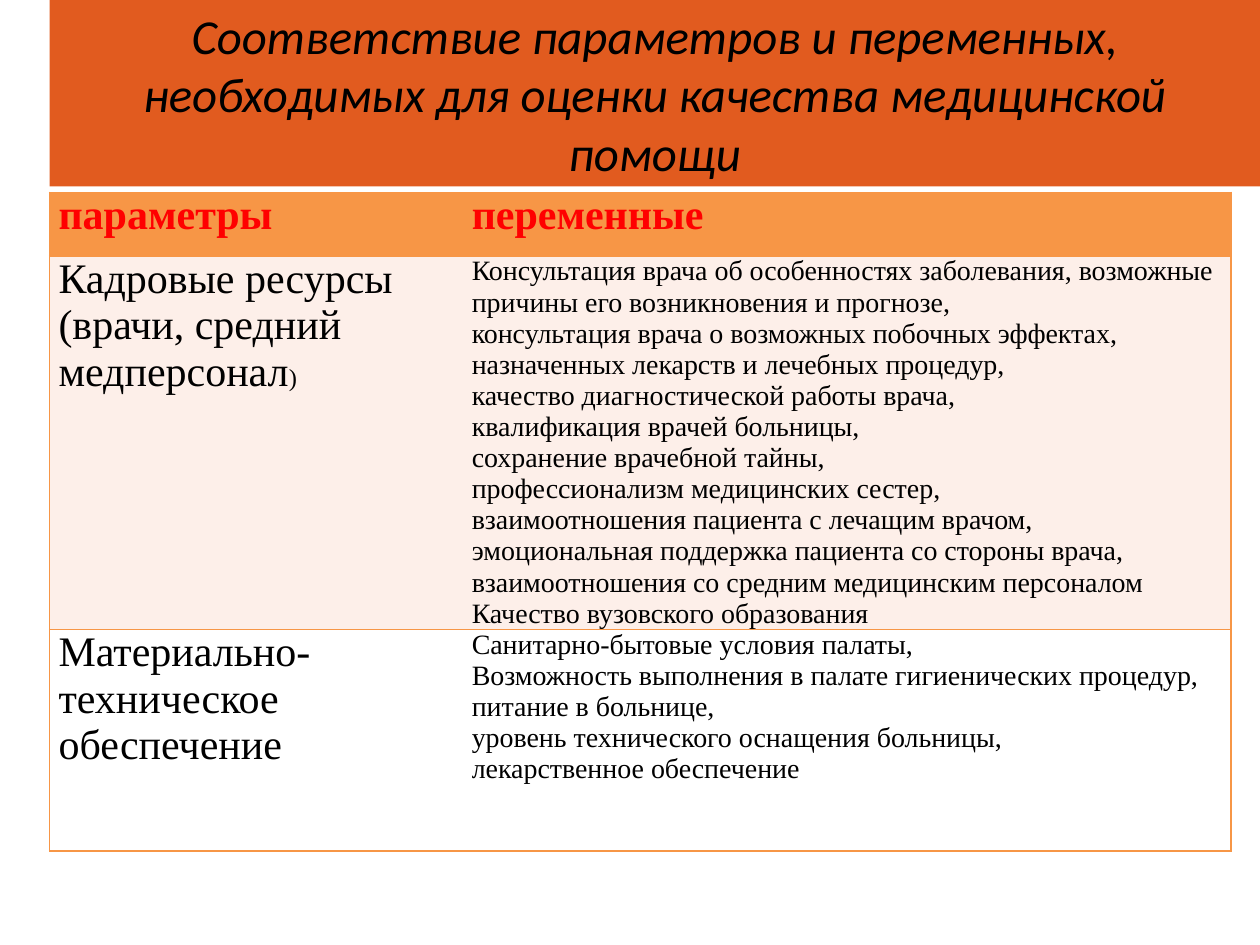
from lxml import etree
from pptx import Presentation
from pptx.dml.color import RGBColor
from pptx.enum.shapes import MSO_SHAPE
from pptx.enum.text import MSO_ANCHOR, PP_ALIGN
from pptx.oxml.ns import qn
from pptx.util import Cm, Pt

RECTANGLE = MSO_SHAPE.RECTANGLE
MIDDLE, TOP = MSO_ANCHOR.MIDDLE, MSO_ANCHOR.TOP
CENTER = PP_ALIGN.CENTER

# Content: a cell is a list of paragraphs, a paragraph a list of (text, size)
TITLE = "Соответствие параметров и переменных, необходимых для оценки качества медицинской помощи"
HEADINGS = ["параметры", "переменные"]
STAFF = [("Кадровые ресурсы (врачи, средний медперсонал", 24), (")", 14)]
STAFF_VARIABLES = [
    "Консультация врача об особенностях заболевания, возможные причины его возникновения и прогнозе,",
    "консультация врача о возможных побочных эффектах,",
    "назначенных лекарств и лечебных процедур,",
    "качество диагностической работы врача,",
    "квалификация врачей больницы,",
    "сохранение врачебной тайны,",
    "профессионализм медицинских сестер,",
    "взаимоотношения пациента с лечащим врачом,",
    "эмоциональная поддержка пациента со стороны врача,",
    "взаимоотношения со средним медицинским персоналом",
    "Качество вузовского образования",
]
SUPPLIES = [("Материально-техническое обеспечение", 24)]
SUPPLY_VARIABLES = [
    "Санитарно-бытовые условия палаты,",
    "Возможность выполнения в палате гигиенических процедур,",
    "питание в больнице,",
    "уровень технического оснащения больницы,",
    "лекарственное обеспечение",
]


def variables(lines):
    return [[(line, 16)] for line in lines]


# Rows: height in cm, fill, text colour, bold, cells
ROWS = [
    (1.28, "F79646", "FF0000", True, [[[(heading, 24)]] for heading in HEADINGS]),
    (7.52, "FDEFE9", "000000", False, [[STAFF], variables(STAFF_VARIABLES)]),
    (4.47, "FFFFFF", "000000", False, [[SUPPLIES], variables(SUPPLY_VARIABLES)]),
]
COLUMN_WIDTHS = [8.33, 15.49]
BORDER = "F79646"
LEFT = 1


def color(hex_code):
    return RGBColor.from_string(hex_code)


def add_run(paragraph, text, size, font, hex_code, bold=False, italic=False):
    run = paragraph.add_run()
    run.text = text
    run.font.size = Pt(size)
    run.font.name = font
    run.font.color.rgb = color(hex_code)
    run.font.bold, run.font.italic = bold, italic


def set_borders(cell, visible_sides):
    properties = cell._tc.get_or_add_tcPr()
    for side in "LRTB":
        line = etree.SubElement(properties, qn(f"a:ln{side}"), w=str(Pt(1)))
        if side in visible_sides:
            fill = etree.SubElement(line, qn("a:solidFill"))
            etree.SubElement(fill, qn("a:srgbClr"), val=BORDER)
        else:
            etree.SubElement(line, qn("a:noFill"))


presentation = Presentation()
presentation.slide_width, presentation.slide_height = Cm(25.4), Cm(19.05)
slide = presentation.slides.add_slide(presentation.slide_layouts[6])

# Title band
band = slide.shapes.add_shape(RECTANGLE, Cm(LEFT), 0, Cm(24.4), Cm(3.76))
band.shadow.inherit = False
band.fill.solid()
band.fill.fore_color.rgb = color("E15B1F")
band.line.fill.background()
band.text_frame.word_wrap = True
band.text_frame.vertical_anchor = MIDDLE
title = band.text_frame.paragraphs[0]
title.alignment = CENTER
add_run(title, TITLE, 27.9, "Calibri", "000000", italic=True)

# Table of parameters and variables
table = slide.shapes.add_table(
    len(ROWS), len(COLUMN_WIDTHS), Cm(LEFT), Cm(3.88),
    Cm(sum(COLUMN_WIDTHS)), Cm(sum(row[0] for row in ROWS)),
).table
table.first_row = table.horz_banding = False
for column, width in zip(table.columns, COLUMN_WIDTHS):
    column.width = Cm(width)

for r, (height, fill, text_color, bold, cells) in enumerate(ROWS):
    table.rows[r].height = Cm(height)
    for c, paragraphs in enumerate(cells):
        cell = table.cell(r, c)
        cell.margin_left = cell.margin_right = Cm(0.18)
        cell.margin_top = cell.margin_bottom = 0
        cell.vertical_anchor = TOP
        set_borders(cell, "LTB" if c == 0 else "RTB")
        cell.fill.solid()
        cell.fill.fore_color.rgb = color(fill)
        for i, runs in enumerate(paragraphs):
            frame = cell.text_frame
            paragraph = frame.add_paragraph() if i else frame.paragraphs[0]
            for text, size in runs:
                add_run(paragraph, text, size, "Times New Roman", text_color, bold)

presentation.save("out.pptx")
